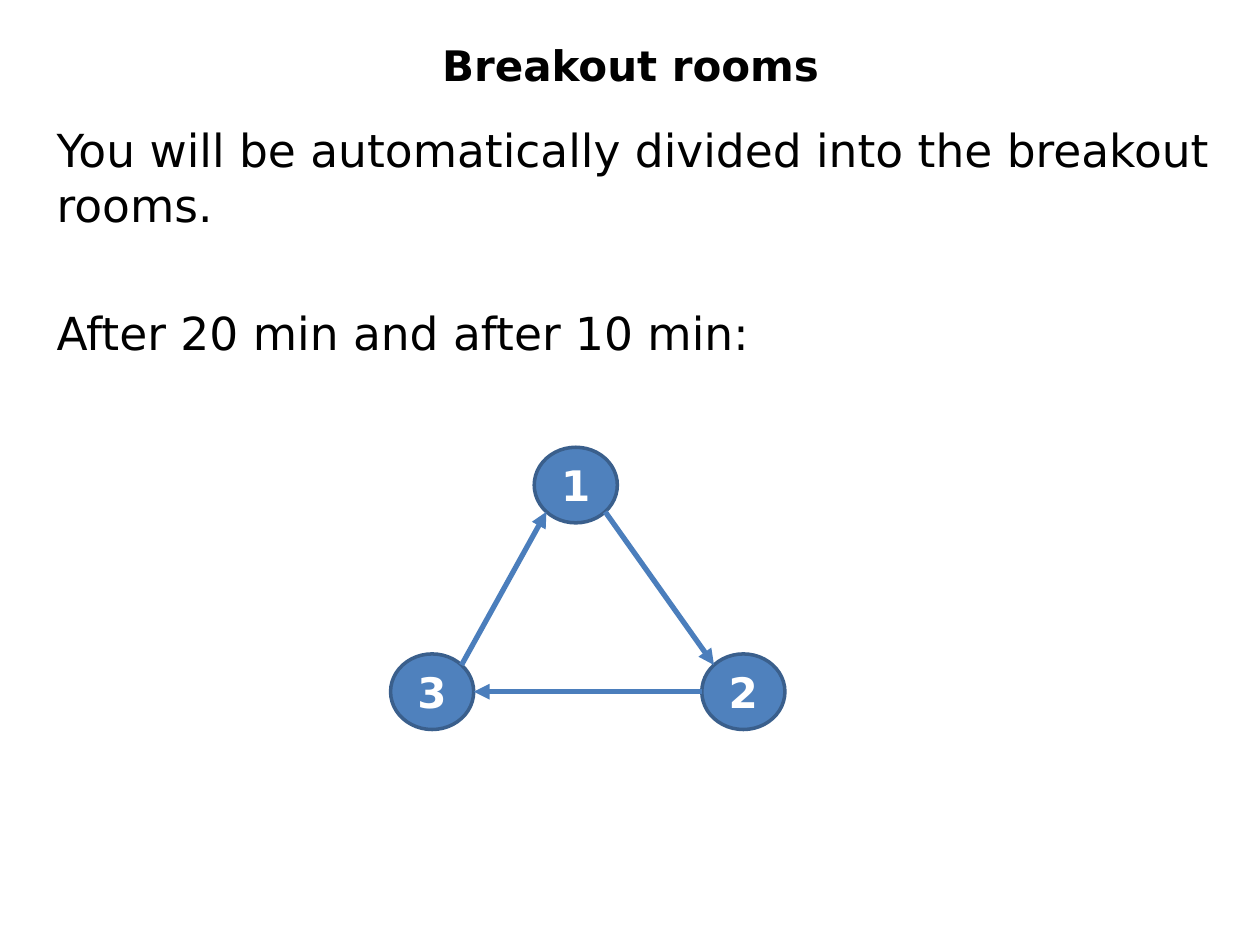
from math import cos, radians, sin

from lxml.etree import SubElement
from pptx import Presentation
from pptx.dml.color import RGBColor
from pptx.enum.shapes import MSO_CONNECTOR, MSO_SHAPE
from pptx.enum.text import MSO_ANCHOR, MSO_AUTO_SIZE, PP_ALIGN
from pptx.oxml.ns import qn
from pptx.util import Inches, Pt

FONT = "DejaVu Sans"
ROOM_WIDTH, ROOM_HEIGHT = 0.66, 0.6

TITLE_FONT = {"name": FONT, "size": Pt(24), "bold": True}
BODY_FONT = {"name": FONT, "size": Pt(26), "bold": False}
FRAME_FORMAT = {
    "word_wrap": True, "auto_size": MSO_AUTO_SIZE.NONE,
    "margin_left": Inches(0.1), "margin_right": Inches(0.1),
    "margin_top": Inches(0.05), "margin_bottom": Inches(0.05),
}
ROOM_FRAME = {
    "word_wrap": False, "vertical_anchor": MSO_ANCHOR.MIDDLE,
    "margin_left": 0, "margin_right": 0, "margin_top": 0, "margin_bottom": 0,
}


def color(hex_value):
    return RGBColor.from_string(hex_value)


def apply(target, formats):
    for attribute, value in formats.items():
        setattr(target, attribute, value)


def place(part, box):
    apply(part, dict(zip(("left", "top", "width", "height"), map(Inches, box))))


def style_text(paragraph, font_format, hex_value):
    apply(paragraph.font, font_format)
    paragraph.font.color.rgb = color(hex_value)


def add_title(slide, box, wording):
    title = slide.shapes.title
    place(title, box)
    frame = title.text_frame
    apply(frame, FRAME_FORMAT | {"vertical_anchor": MSO_ANCHOR.MIDDLE})
    frame.text = wording
    frame.paragraphs[0].alignment = PP_ALIGN.CENTER
    style_text(frame.paragraphs[0], TITLE_FONT, "000000")


def add_instructions(slide, box, sentences):
    instructions = slide.placeholders[1]
    place(instructions, box)
    frame = instructions.text_frame
    apply(frame, FRAME_FORMAT | {"vertical_anchor": MSO_ANCHOR.TOP})
    frame.text = "\n".join(sentences)
    for index, paragraph in enumerate(frame.paragraphs):
        # Unbulleted, slightly indented text
        properties = paragraph._p.get_or_add_pPr()
        properties.set("marL", str(Inches(0.07)))
        properties.set("indent", "0")
        SubElement(properties, qn("a:buNone"))
        paragraph.space_before = Pt(42 if index else 0)
        style_text(paragraph, BODY_FONT, "000000")


def add_room(slide, box, number):
    room = slide.shapes.add_shape(MSO_SHAPE.OVAL, *map(Inches, box))
    room.shadow.inherit = False
    room.fill.solid()
    room.fill.fore_color.rgb = color("4F81BD")
    room.line.color.rgb = color("3A5F8C")
    room.line.width = Pt(2)
    apply(room.text_frame, ROOM_FRAME)
    label = room.text_frame.paragraphs[0]
    label.text = number
    label.alignment = PP_ALIGN.CENTER
    style_text(label, TITLE_FONT, "FFFFFF")


def rim_point(corner, degrees):
    """Point on a room's rim, clockwise from the right-hand side."""
    left, top = corner
    angle = radians(degrees)
    return (Inches(left + ROOM_WIDTH / 2 * (1 + cos(angle))),
            Inches(top + ROOM_HEIGHT / 2 * (1 + sin(angle))))


def add_arrow(slide, start, end):
    arrow = slide.shapes.add_connector(MSO_CONNECTOR.STRAIGHT, *start, *end)
    arrow.line.color.rgb = color("4B7EBC")
    arrow.line.width = Pt(3)
    SubElement(arrow.line._get_or_add_ln(), qn("a:tailEnd"), type="triangle")
    SubElement(arrow._element.spPr, qn("a:effectLst"))


def add_rotation(slide, box):
    left, top, width, height = box
    lower = top + height - ROOM_HEIGHT
    rooms = {
        "1": (left + 1.14, top),
        "3": (left, lower),
        "2": (left + width - ROOM_WIDTH, lower),
    }
    for number, corner in rooms.items():
        add_room(slide, (*corner, ROOM_WIDTH, ROOM_HEIGHT), number)

    # Moves between rooms, with the rim angle at each end
    moves = [("1", 45, "2", 225), ("2", 180, "3", 0), ("3", 315, "1", 135)]
    for source, leaving, target, arriving in moves:
        add_arrow(slide, rim_point(rooms[source], leaving),
                  rim_point(rooms[target], arriving))


def main():
    deck = Presentation()
    deck.slide_width, deck.slide_height = Inches(10), Inches(7.5)
    slide = deck.slides.add_slide(deck.slide_layouts[1])
    add_title(slide, (0.28, 0.21, 9.45, 0.6), "Breakout rooms")
    add_instructions(slide, (0.28, 0.92, 9.45, 5.51), [
        "You will be automatically divided into the breakout rooms.",
        "After 20 min and after 10 min:",
    ])
    add_rotation(slide, (3.1, 3.55, 3.13, 2.24))
    deck.save("out.pptx")


if __name__ == "__main__":
    main()
